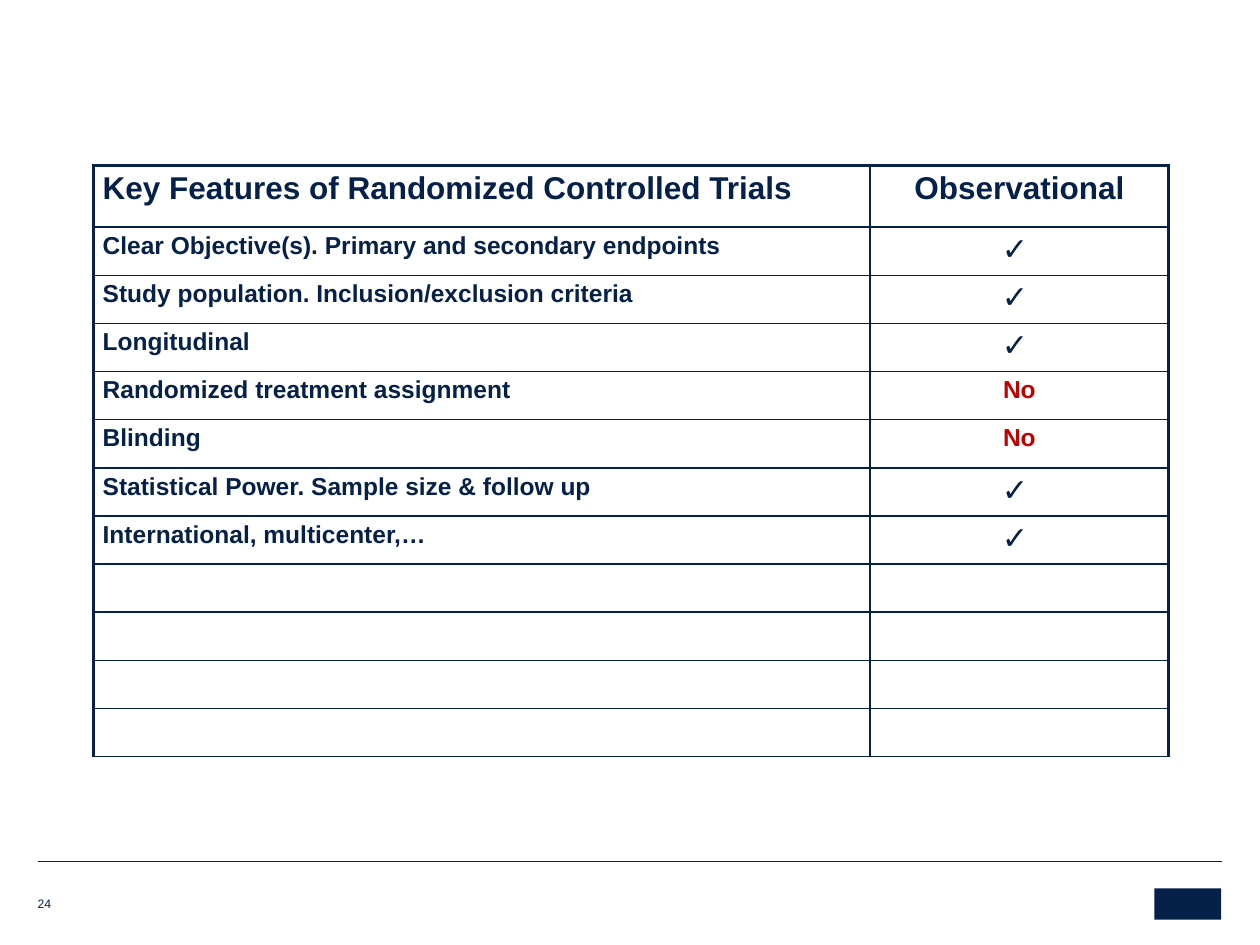
from lxml import etree
from pptx import Presentation
from pptx.dml.color import RGBColor
from pptx.enum.shapes import MSO_CONNECTOR, MSO_SHAPE
from pptx.enum.text import MSO_ANCHOR, PP_ALIGN
from pptx.oxml.ns import qn
from pptx.util import Cm, Pt

LEFT, CENTER = PP_ALIGN.LEFT, PP_ALIGN.CENTER
BOTTOM = MSO_ANCHOR.BOTTOM
STRAIGHT, RECTANGLE = MSO_CONNECTOR.STRAIGHT, MSO_SHAPE.RECTANGLE

NAVY, RED = "052049", "C00000"
CHECK = "✓"
HEADER = ("Key Features of Randomized Controlled Trials", "Observational")
FEATURES = [
    ("Clear Objective(s). Primary and secondary endpoints", CHECK),
    ("Study population. Inclusion/exclusion criteria", CHECK),
    ("Longitudinal", CHECK),
    ("Randomized treatment assignment", "No"),
    ("Blinding", "No"),
    ("Statistical Power. Sample size & follow up", CHECK),
    ("International, multicenter,…", CHECK),
]
EMPTY_ROWS = 4
ROWS = [HEADER] + FEATURES + [("", "")] * EMPTY_ROWS
COLUMN_WIDTHS = (15.65, 6.02)
HEADER_HEIGHT, ROW_HEIGHT = 1.24, 0.97
THICK, THIN = 2.25, 1


def color(value):
    return RGBColor.from_string(value)


def write(frame, text, size=14, bold=True, ink=NAVY, align=LEFT, bullet=None):
    para = frame.paragraphs[0]
    para.alignment = align
    if bullet:
        properties = para._p.get_or_add_pPr()
        properties.set("marL", "0")
        properties.set("indent", "0")
        etree.SubElement(properties, qn("a:buFont"), typeface="Arial")
        etree.SubElement(properties, qn("a:buChar"), char=bullet)
    if text:
        span = para.add_run()
        span.text = text
        span.font.name = "Arial"
        span.font.size = Pt(size)
        span.font.bold = bold
        span.font.color.rgb = color(ink)


def set_borders(cell, widths):
    properties = cell._tc.get_or_add_tcPr()
    for position, (side, width) in enumerate(widths.items()):
        line = etree.Element(qn(f"a:ln{side}"), w=str(Pt(width)))
        fill = etree.SubElement(line, qn("a:solidFill"))
        etree.SubElement(fill, qn("a:srgbClr"), val=NAVY)
        properties.insert(position, line)


def add_features_table(page):
    height = HEADER_HEIGHT + ROW_HEIGHT * (len(ROWS) - 1)
    table = page.shapes.add_table(
        len(ROWS), len(COLUMN_WIDTHS), Cm(1.89), Cm(3.34),
        Cm(sum(COLUMN_WIDTHS)), Cm(height)).table
    table.first_row = table.horz_banding = False
    for column, width in zip(table.columns, COLUMN_WIDTHS):
        column.width = Cm(width)
    for r, texts in enumerate(ROWS):
        table.rows[r].height = Cm(ROW_HEIGHT if r else HEADER_HEIGHT)
        for c, text in enumerate(texts):
            cell = table.cell(r, c)
            cell.margin_left = cell.margin_right = Cm(0.18)
            cell.margin_top = cell.margin_bottom = Cm(0.1)
            cell.fill.background()
            set_borders(cell, {
                "L": THIN if c else THICK,
                "R": THICK if c else THIN,
                "T": THIN if r else THICK,
                "B": THIN,
            })
            align = CENTER if c else LEFT
            if text == CHECK:
                write(cell.text_frame, " ", size=18, bold=False,
                      align=align, bullet=CHECK)
            else:
                write(cell.text_frame, text, size=14 if r else 18,
                      ink=RED if text == "No" else NAVY, align=align)


def add_footer(page):
    rule = page.shapes.add_connector(
        STRAIGHT, Cm(0.76), Cm(17.37), Cm(24.64), Cm(17.37))
    rule.line.color.rgb = color(NAVY)
    rule.line.width = Pt(0.25)
    etree.SubElement(rule._element.spPr, qn("a:effectLst"))

    emblem = page.shapes.add_shape(
        RECTANGLE, Cm(23.27), Cm(17.91), Cm(1.35), Cm(0.63))
    emblem.shadow.inherit = False
    emblem.fill.solid()
    emblem.fill.fore_color.rgb = color(NAVY)
    emblem.line.fill.background()

    box = page.shapes.add_textbox(Cm(0.76), Cm(17.93), Cm(0.69), Cm(0.43))
    frame = box.text_frame
    frame.word_wrap = True
    frame.vertical_anchor = BOTTOM
    frame.margin_left = frame.margin_right = 0
    frame.margin_top = frame.margin_bottom = 0
    write(frame, "24", size=7, bold=False)


def main():
    """Build the slide comparing trial features with observational studies."""
    deck = Presentation()
    deck.slide_width, deck.slide_height = Cm(25.4), Cm(19.05)
    page = deck.slides.add_slide(deck.slide_layouts[6])
    add_footer(page)
    add_features_table(page)
    deck.save("out.pptx")


if __name__ == "__main__":
    main()
